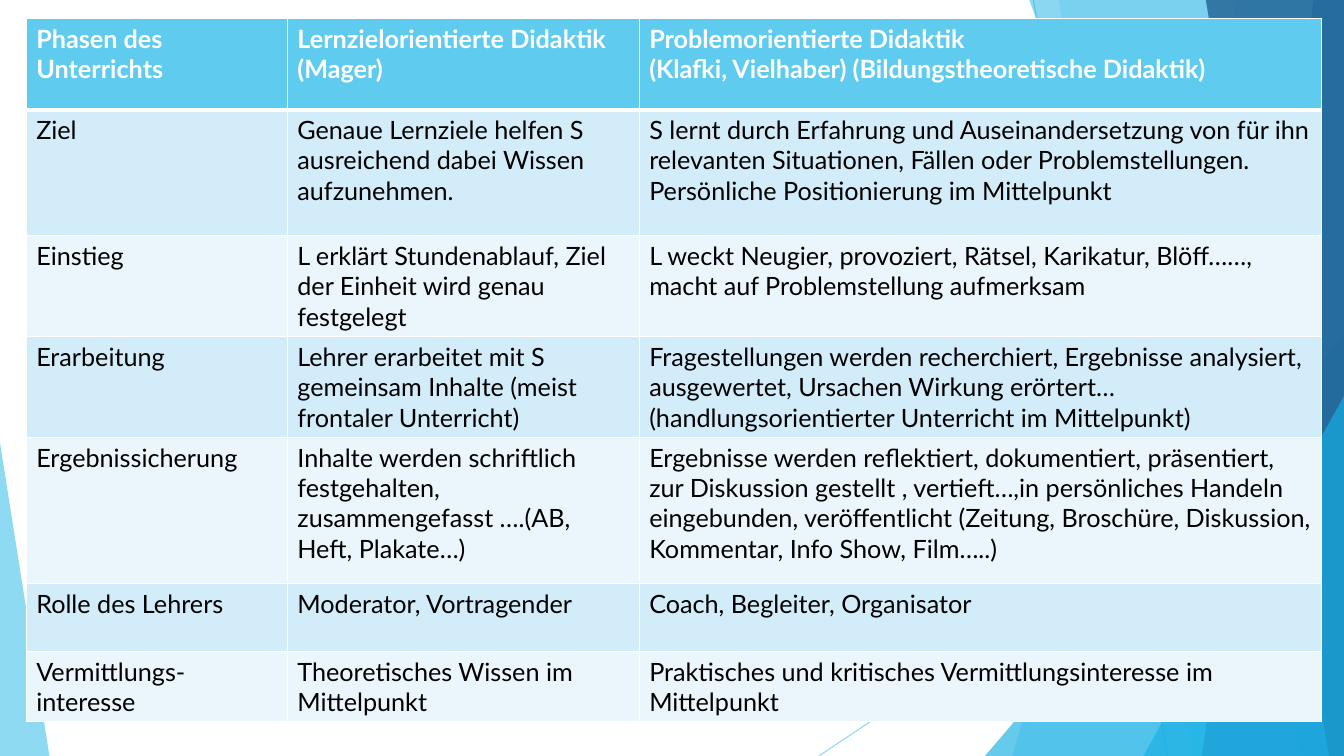
from lxml import etree
from pptx import Presentation
from pptx.dml.color import RGBColor
from pptx.enum.shapes import MSO_CONNECTOR, MSO_SHAPE
from pptx.oxml.ns import qn
from pptx.util import Inches, Pt

STRAIGHT = MSO_CONNECTOR.STRAIGHT
TRIANGLE = MSO_SHAPE.ISOSCELES_TRIANGLE

SKY, AZURE, BLUE, NAVY = "5FCBEF", "17B0E4", "2E83C3", "226292"
WHITE, BLACK = "FFFFFF", "000000"
BANDS = ("D2ECF9", "EAF6FC")

COLUMN_SHARES = (19.43, 26.18, 50.79)
ROW_SHARES = (12.13, 16.67, 12.13, 12.13, 19.33, 8.93, 8.93)
PHASES = (
    ("Phasen des Unterrichts",
     "Lernzielorientierte Didaktik (Mager)",
     "Problemorientierte Didaktik\n"
     "(Klafki, Vielhaber) (Bildungstheoretische Didaktik)"),
    ("Ziel",
     "Genaue Lernziele helfen S ausreichend dabei Wissen aufzunehmen.",
     "S lernt durch Erfahrung und Auseinandersetzung von für ihn relevanten "
     "Situationen, Fällen oder Problemstellungen. Persönliche Positionierung "
     "im Mittelpunkt"),
    ("Einstieg",
     "L erklärt Stundenablauf, Ziel der Einheit wird genau festgelegt",
     "L weckt Neugier, provoziert, Rätsel, Karikatur, Blöff……, macht auf "
     "Problemstellung aufmerksam"),
    ("Erarbeitung",
     "Lehrer erarbeitet mit S gemeinsam Inhalte (meist frontaler Unterricht)",
     "Fragestellungen werden recherchiert, Ergebnisse analysiert, ausgewertet, "
     "Ursachen Wirkung erörtert…\n"
     "(handlungsorientierter Unterricht im Mittelpunkt)"),
    ("Ergebnissicherung",
     "Inhalte werden schriftlich festgehalten, zusammengefasst ….(AB, Heft, "
     "Plakate…)",
     "Ergebnisse werden reflektiert, dokumentiert, präsentiert, zur Diskussion "
     "gestellt , vertieft…,in persönliches Handeln eingebunden, veröffentlicht "
     "(Zeitung, Broschüre, Diskussion, Kommentar, Info Show, Film…..)"),
    ("Rolle des Lehrers",
     "Moderator, Vortragender",
     "Coach, Begleiter, Organisator"),
    ("Vermittlungs-interesse",
     "Theoretisches Wissen im Mittelpunkt",
     "Praktisches und kritisches Vermittlungsinteresse im Mittelpunkt"),
)


def colour(hex_code):
    return RGBColor.from_string(hex_code)


class Lesson:
    font, size = "Lato", Pt(18)

    def __init__(self, deck):
        self.width, self.height = deck.slide_width, deck.slide_height
        self.slide = deck.slides.add_slide(deck.slide_layouts[6])
        self.shapes = self.slide.shapes

    def x(self, percent):
        return round(self.width * percent / 100)

    def y(self, percent):
        return round(self.height * percent / 100)

    def fade(self, shape, opacity):
        tint = next(shape._element.spPr.iter(qn("a:srgbClr")))
        etree.SubElement(tint, qn("a:alpha"), val=str(opacity * 1000))

    def paint(self, shape, hex_code, opacity):
        shape.shadow.inherit = False
        shape.fill.solid()
        shape.fill.fore_color.rgb = colour(hex_code)
        shape.line.fill.background()
        self.fade(shape, opacity)

    def ray(self, start, end):
        line = self.shapes.add_connector(
            STRAIGHT, self.x(start[0]), self.y(start[1]), self.x(end[0]), self.y(end[1]))
        line.line.color.rgb = colour(SKY)
        line.line.width = Pt(0.75)
        self.fade(line, 70)
        etree.SubElement(line._element.spPr, qn("a:effectLst"))

    def facet(self, top_left, bottom_left, hex_code, opacity):
        outline = self.shapes.build_freeform(self.x(top_left), 0)
        outline.add_line_segments([
            (self.width, 0), (self.width, self.height), (self.x(bottom_left), self.height)])
        self.paint(outline.convert_to_shape(), hex_code, opacity)

    def corner(self, left, top, width, apex, hex_code, opacity):
        wedge = self.shapes.add_shape(
            TRIANGLE, self.x(left), self.y(top), self.x(width), self.y(100 - top))
        wedge.adjustments[0] = apex
        self.paint(wedge, hex_code, opacity)

    def border(self, cell, side, points):
        edge = etree.SubElement(
            cell._tc.get_or_add_tcPr(), qn(f"a:ln{side}"), w=str(Pt(points)))
        etree.SubElement(etree.SubElement(edge, qn("a:solidFill")), qn("a:srgbClr"), val=WHITE)

    def cell(self, cell, text, row):
        heading = row == 0
        for side in "LRTB":
            below_heading = (row, side) in ((0, "B"), (1, "T"))
            self.border(cell, side, 3 if below_heading else 1)
        cell.fill.solid()
        cell.fill.fore_color.rgb = colour(SKY if heading else BANDS[(row - 1) % 2])
        frame = cell.text_frame
        for index, wording in enumerate(text.split("\n")):
            paragraph = frame.add_paragraph() if index else frame.paragraphs[0]
            run = paragraph.add_run()
            run.text = wording
            run.font.name, run.font.size = self.font, self.size
            run.font.bold = heading
            run.font.color.rgb = colour(WHITE if heading else BLACK)

    def table(self, left, top, columns, rows, content):
        grid = self.shapes.add_table(
            len(rows), len(columns), self.x(left), self.y(top),
            self.x(sum(columns)), self.y(sum(rows))).table
        grid.horz_banding = False
        for column, share in zip(grid.columns, columns):
            column.width = self.x(share)
        for row, share in zip(grid.rows, rows):
            row.height = self.y(share)
        for row, texts in enumerate(content):
            for column, text in enumerate(texts):
                self.cell(grid.cell(row, column), text, row)


def main():
    deck = Presentation()
    deck.slide_width, deck.slide_height = Inches(13.33), Inches(7.5)
    lesson = Lesson(deck)
    lesson.ray((76.89, 0), (86.87, 100))
    lesson.ray((100, 53.73), (60.92, 100))
    lesson.facet(92.12, 75.32, SKY, 36)
    lesson.facet(78.77, 88.75, SKY, 20)
    lesson.corner(73.29, 44.4, 26.71, 1, AZURE, 66)
    lesson.facet(76.59, 96.85, AZURE, 50)
    lesson.facet(97.75, 89.42, BLUE, 70)
    lesson.facet(89.72, 98.87, NAVY, 80)
    lesson.corner(85.07, 52.4, 14.93, 1, AZURE, 66)
    lesson.corner(0, 58.53, 3.68, 0, SKY, 70)
    lesson.table(1.95, 2.4, COLUMN_SHARES, ROW_SHARES, PHASES)
    deck.save("out.pptx")


if __name__ == "__main__":
    main()
